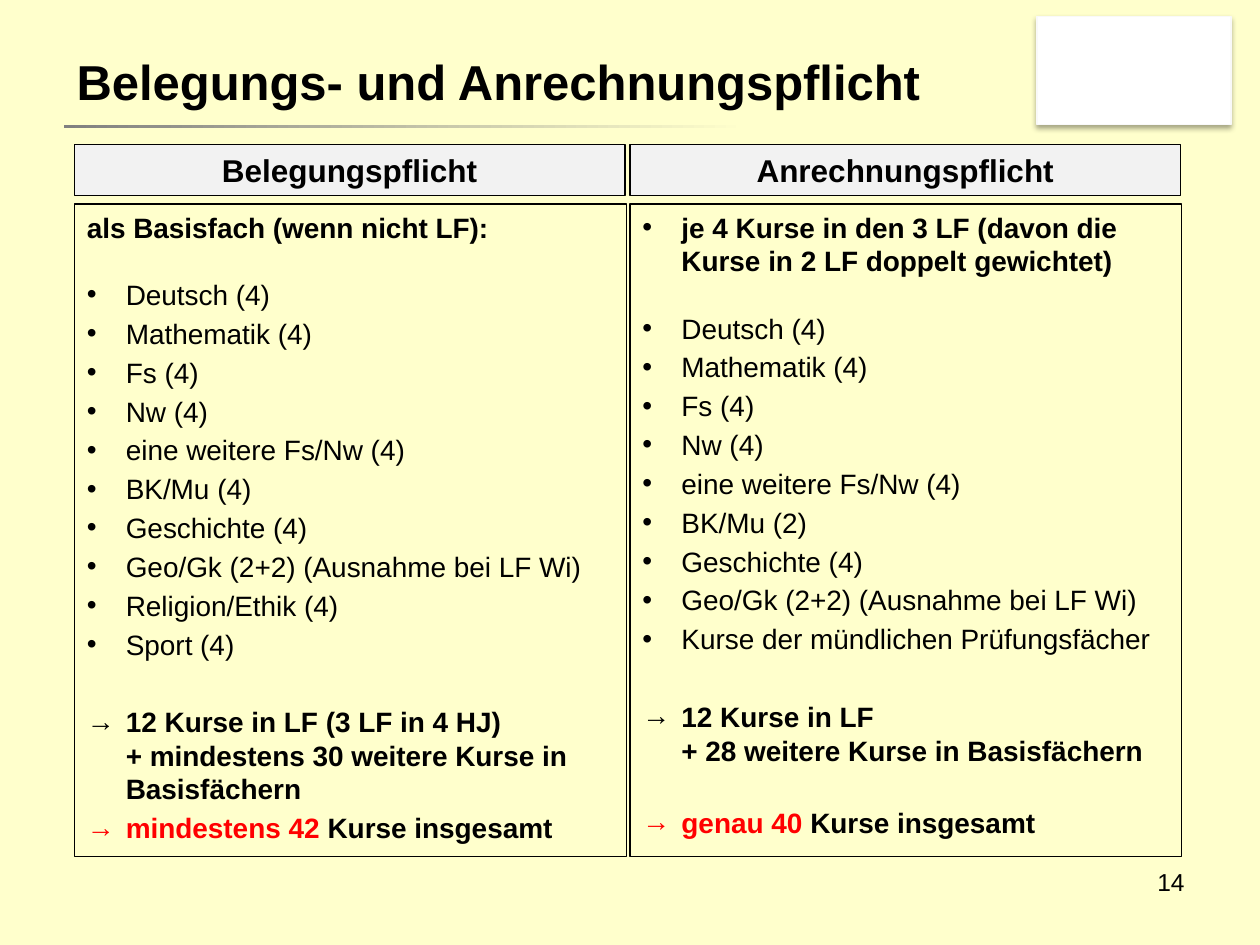
from pptx import Presentation
from pptx.dml.color import RGBColor
from pptx.enum.shapes import MSO_SHAPE as Shape
from pptx.enum.text import MSO_ANCHOR as Anchor, PP_ALIGN as Align
from pptx.oxml import parse_xml
from pptx.oxml.ns import nsdecls
from pptx.util import Inches, Pt

BLACK, RED, CREAM, GREY = "000000", "FF0000", "FFFFCC", "808080"
LINE_GAP = 19.2
ITEM_GAP = 3
INDENT = Inches(0.31)


def color(value):
    return RGBColor.from_string(value)


class Page:
    font = "Arial"
    columns, rows = 100, 75

    def __init__(self, deck):
        self.deck = deck
        self.slide = deck.slides.add_slide(deck.slide_layouts[6])
        self.slide.background.fill.solid()
        self.slide.background.fill.fore_color.rgb = color(CREAM)

    def area(self, left, top, width, height):
        column = self.deck.slide_width / self.columns
        row = self.deck.slide_height / self.rows
        return (round(left * column), round(top * row),
                round(width * column), round(height * row))

    def style(self, span, size, bold, tint=BLACK):
        span.font.name, span.font.size, span.font.bold = self.font, Pt(size), bold
        span.font.color.rgb = color(tint)

    def panel(self, area, fill=None, line=BLACK):
        box = self.slide.shapes.add_shape(Shape.RECTANGLE, *self.area(*area))
        box.shadow.inherit = False
        if fill:
            box.fill.solid()
            box.fill.fore_color.rgb = color(fill)
        else:
            box.fill.background()
        box.line.color.rgb = color(line)
        box.line.width = Pt(0.75)
        box.text_frame.word_wrap = True
        return box

    def plate(self, area):
        box = self.panel(area, "FFFFFF", "F9F9F9")
        effects = box._element.find(".//{*}effectLst")
        effects.append(parse_xml(
            f'<a:outerShdw {nsdecls("a")} blurRad="39400" dist="22900" dir="5400000" '
            'rotWithShape="0"><a:srgbClr val="000000"><a:alpha val="35000"/>'
            '</a:srgbClr></a:outerShdw>'))

    def fading_rule(self, area):
        rule = self.panel(area)
        rule.line.fill.background()
        rule.fill.gradient()
        rule.fill.gradient_angle = 0
        for stop, tint, position in zip(rule.fill.gradient_stops, (GREY, CREAM), (0, 1)):
            stop.color.rgb = color(tint)
            stop.position = position

    def label(self, area, text, size, bold=False, align=Align.LEFT, anchor=Anchor.TOP):
        box = self.slide.shapes.add_textbox(*self.area(*area))
        self.set_text(box, text, size, bold, align, anchor)

    def heading(self, area, text):
        self.set_text(self.panel(area, "F2F2F2"), text, 18, True, Align.CENTER, Anchor.TOP)

    def set_text(self, box, text, size, bold, align, anchor):
        frame = box.text_frame
        frame.text, frame.word_wrap, frame.vertical_anchor = text, True, anchor
        para = frame.paragraphs[0]
        para.alignment = align
        self.style(para.runs[0], size, bold)

    def listing(self, area, entries):
        frame = self.panel(area).text_frame
        frame.vertical_anchor = Anchor.TOP
        for index, (bullet, bold, after, red, text) in enumerate(entries):
            para = frame.add_paragraph() if index else frame.paragraphs[0]
            para.alignment = Align.LEFT
            para.space_after = Pt(after)
            if bullet:
                self.bullet(para, bullet)
            if red:
                para.text = red
                para.add_run().text = text
            else:
                para.text = text
            for span in para.runs:
                self.style(span, 16, bold, RED if span.text == red else BLACK)

    def bullet(self, para, mark):
        properties = para._p.get_or_add_pPr()
        properties.set("marL", str(INDENT))
        properties.set("indent", str(-INDENT))
        properties.append(parse_xml(f'<a:buFont {nsdecls("a")} typeface="{self.font}"/>'))
        properties.append(parse_xml(f'<a:buChar {nsdecls("a")} char="{mark}"/>'))


def entries(intro, subjects, summary, summary_gap, red):
    last = len(subjects) - 1
    return [
        intro,
        *(("•", False, ITEM_GAP if index < last else LINE_GAP + 2 * ITEM_GAP, "", subject)
          for index, subject in enumerate(subjects)),
        ("→", True, summary_gap, "", summary),
        ("→", True, 0, red, "Kurse insgesamt"),
    ]


def subjects(art_courses, *others):
    return ["Deutsch (4)", "Mathematik (4)", "Fs (4)", "Nw (4)", "eine weitere Fs/Nw (4)",
            f"BK/Mu ({art_courses})", "Geschichte (4)",
            "Geo/Gk (2+2) (Ausnahme bei LF Wi)", *others]


def main():
    deck = Presentation()
    deck.slide_width, deck.slide_height = Inches(10), Inches(7.5)
    page = Page(deck)
    page.plate((82.3, 1.3, 15.4, 8.6))
    page.label((71.7, 68.3, 23.3, 5.2), "14", 14, align=Align.RIGHT)
    page.fading_rule((5.1, 9.9, 54.2, 0.3))
    page.label((5.1, 2.1, 91.3, 8.7), "Belegungs- und Anrechnungspflicht", 28, True,
               anchor=Anchor.MIDDLE)
    required = entries(
        ("", True, LINE_GAP, "", "als Basisfach (wenn nicht LF):"),
        subjects(4, "Religion/Ethik (4)", "Sport (4)"),
        "12 Kurse in LF (3 LF in 4 HJ)\n+ mindestens 30 weitere Kurse in Basisfächern",
        ITEM_GAP, "mindestens 42 ")
    credited = entries(
        ("•", True, LINE_GAP, "",
         "je 4 Kurse in den 3 LF (davon die Kurse in 2 LF doppelt gewichtet)"),
        subjects(2, "Kurse der mündlichen Prüfungsfächer"),
        "12 Kurse in LF\n+ 28 weitere Kurse in Basisfächern",
        LINE_GAP + ITEM_GAP, "genau 40 ")
    for left, title, content in ((5.9, "Belegungspflicht", required),
                                 (50, "Anrechnungspflicht", credited)):
        page.heading((left, 11.5, 43.7, 4), title)
        page.listing((left, 16.2, 43.8, 51.8), content)
    deck.save("out.pptx")


if __name__ == "__main__":
    main()
